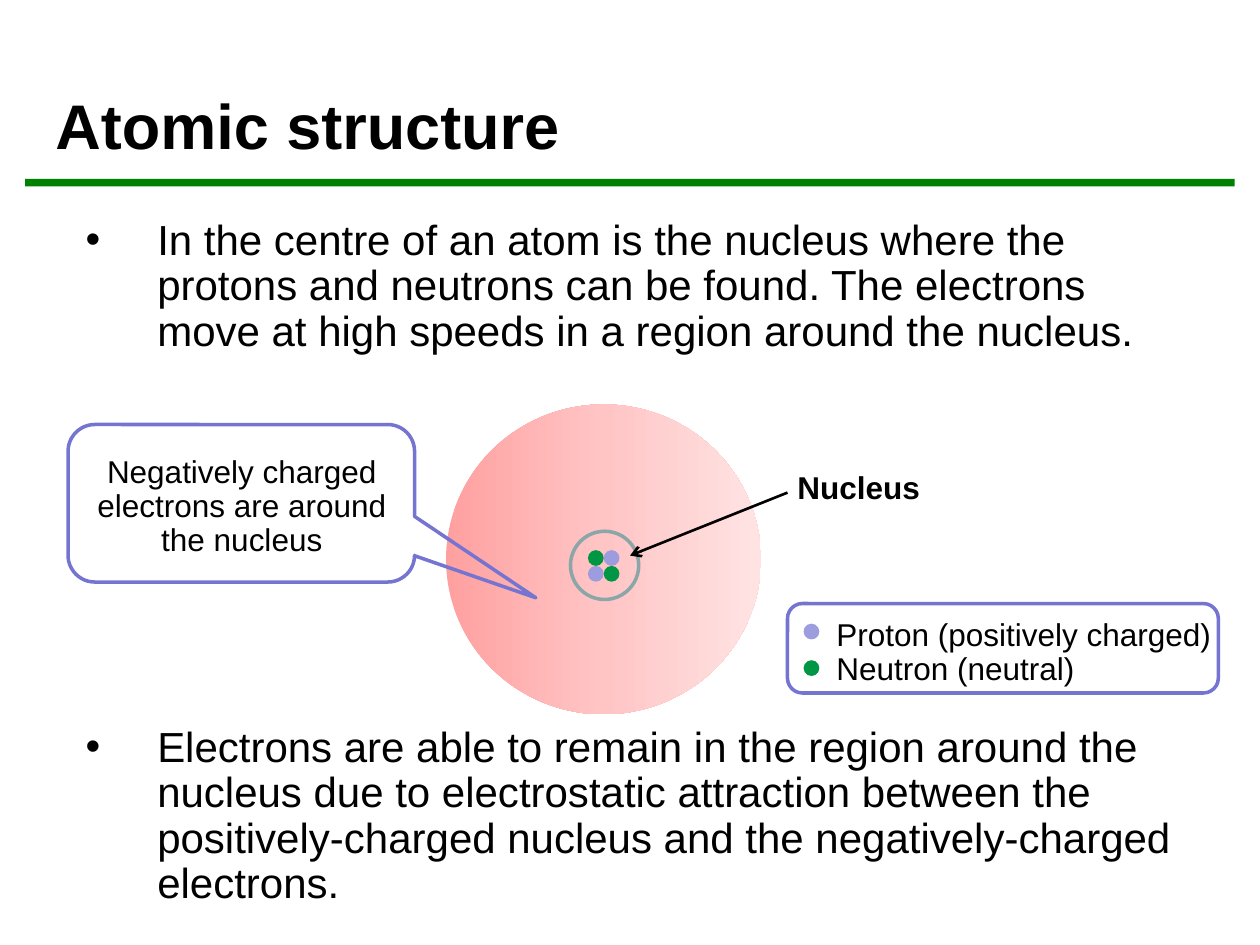
from lxml import etree
from pptx import Presentation
from pptx import util as u
from pptx.dml import color
from pptx.enum import shapes, text
from pptx.oxml import ns

Pt = u.Pt
COLORS = {
    "black": "000000", "rule": "008000", "proton": "9C9CDF", "neutron": "009644",
    "nucleus": "8AA6A8", "frame": "7575D1",
    "cloud_left": "FFA0A0", "cloud_middle": "FFC5C5", "cloud_right": "FFE3E3",
}
KINDS = shapes.MSO_SHAPE
ALIGN = text.PP_ALIGN

deck = Presentation()
deck.slide_width, deck.slide_height = Pt(720), Pt(540)
page = deck.slides.add_slide(deck.slide_layouts[5])


def add_outline(kind, left, top, width, height, fill=None, line=None):
    shape = page.shapes.add_shape(kind, Pt(left), Pt(top), Pt(width), Pt(height))
    shape.shadow.inherit = False
    if fill:
        shape.fill.solid()
        shape.fill.fore_color.rgb = color.RGBColor.from_string(COLORS[fill])
    else:
        shape.fill.background()
    if line:
        shape.line.color.rgb = color.RGBColor.from_string(COLORS[line])
        shape.line.width = Pt(2)
    else:
        shape.line.fill.background()
    return shape


def add_text(left, top, width, height, lines, size, align=ALIGN.LEFT, bold=False, bullet=False, gap=0):
    box = page.shapes.add_textbox(Pt(left), Pt(top), Pt(width), Pt(height))
    frame = box.text_frame
    frame.word_wrap = True
    for index, line in enumerate(lines):
        para = frame.add_paragraph() if index else frame.paragraphs[0]
        para.text = line
        para.alignment = align
        para.line_spacing = 0.9
        if index:
            para.space_before = Pt(gap)
        if bullet:
            props = para._p.get_or_add_pPr()
            props.set("marL", str(Pt(41)))
            props.set("indent", str(Pt(-41)))
            etree.SubElement(props, ns.qn("a:buFont")).set("typeface", "Arial")
            etree.SubElement(props, ns.qn("a:buChar")).set("char", "•")
        para.font.name = "Arial"
        para.font.size = Pt(size)
        para.font.bold = bold
        para.font.color.rgb = color.RGBColor.from_string(COLORS["black"])


add_outline(KINDS.RECTANGLE, 14.4, 102.2, 691.2, 4.3, fill="rule")

title = page.shapes.title
title.left, title.top, title.width, title.height = Pt(24.5), Pt(12.2), Pt(674.6), Pt(84.2)
title.text_frame.text = "Atomic structure"
title.text_frame.vertical_anchor = text.MSO_ANCHOR.BOTTOM
heading = title.text_frame.paragraphs[0]
heading.alignment = ALIGN.LEFT
heading.font.name = "Arial"
heading.font.size = Pt(36)
heading.font.bold = True
heading.font.color.rgb = color.RGBColor.from_string(COLORS["black"])

add_text(41.8, 121.7, 645.1, 420.5, [
    "In the centre of an atom is the nucleus where the protons and neutrons can be found. "
    "The electrons move at high speeds in a region around the nucleus.",
    "Electrons are able to remain in the region around the nucleus due to electrostatic attraction "
    "between the positively-charged nucleus and the negatively-charged electrons.",
], 24, bullet=True, gap=212)

cloud = add_outline(KINDS.OVAL, 254.9, 231.1, 180, 177.1)
cloud.fill.gradient()
cloud.fill.gradient_angle = 0
stops = cloud._element.spPr.find(ns.qn("a:gradFill")).find(ns.qn("a:gsLst"))
for stop in list(stops):
    stops.remove(stop)
for position, name in ((0, "cloud_left"), (50, "cloud_middle"), (100, "cloud_right")):
    stop = etree.SubElement(stops, ns.qn("a:gs"), pos=str(position * 1000))
    etree.SubElement(stop, ns.qn("a:srgbClr"), val=COLORS[name])

DOT = 9
for row in range(2):
    for column in range(2):
        particle = "neutron" if row == column else "proton"
        add_outline(KINDS.OVAL, 336 + column * DOT, 314.4 + row * DOT, DOT, DOT, fill=particle)
add_outline(KINDS.OVAL, 326, 303.6, 39, 39, line="nucleus")

for top, particle in ((356.4, "proton"), (377.3, "neutron")):
    add_outline(KINDS.OVAL, 459.2, top, DOT, DOT, fill=particle)
add_text(470.9, 350.6, 231.1, 46.8, ["Proton (positively charged)\vNeutron (neutral)"], 18)
add_outline(KINDS.ROUNDED_RECTANGLE, 450, 344.9, 246.2, 51.1, line="frame")

arrow = page.shapes.add_connector(shapes.MSO_CONNECTOR.STRAIGHT, Pt(450), Pt(281.5), Pt(360), Pt(317.5))
arrow.line.color.rgb = color.RGBColor.from_string(COLORS["black"])
arrow.line.width = Pt(1.5)
etree.SubElement(arrow.line._get_or_add_ln(), ns.qn("a:tailEnd"), type="arrow")
etree.SubElement(arrow._element.spPr, ns.qn("a:effectLst"))
add_text(432, 266.4, 117.4, 26.6, ["Nucleus"], 18, ALIGN.CENTER, bold=True)

add_text(44.6, 257, 187.2, 66.2, ["Negatively charged electrons are around the nucleus"], 18, ALIGN.CENTER)
callout = add_outline(KINDS.ROUNDED_RECTANGULAR_CALLOUT, 38.9, 242.6, 198, 90, line="frame")
for index, value in enumerate((0.85, 0.6, 0.17)):
    callout.adjustments[index] = value

deck.save("out.pptx")
